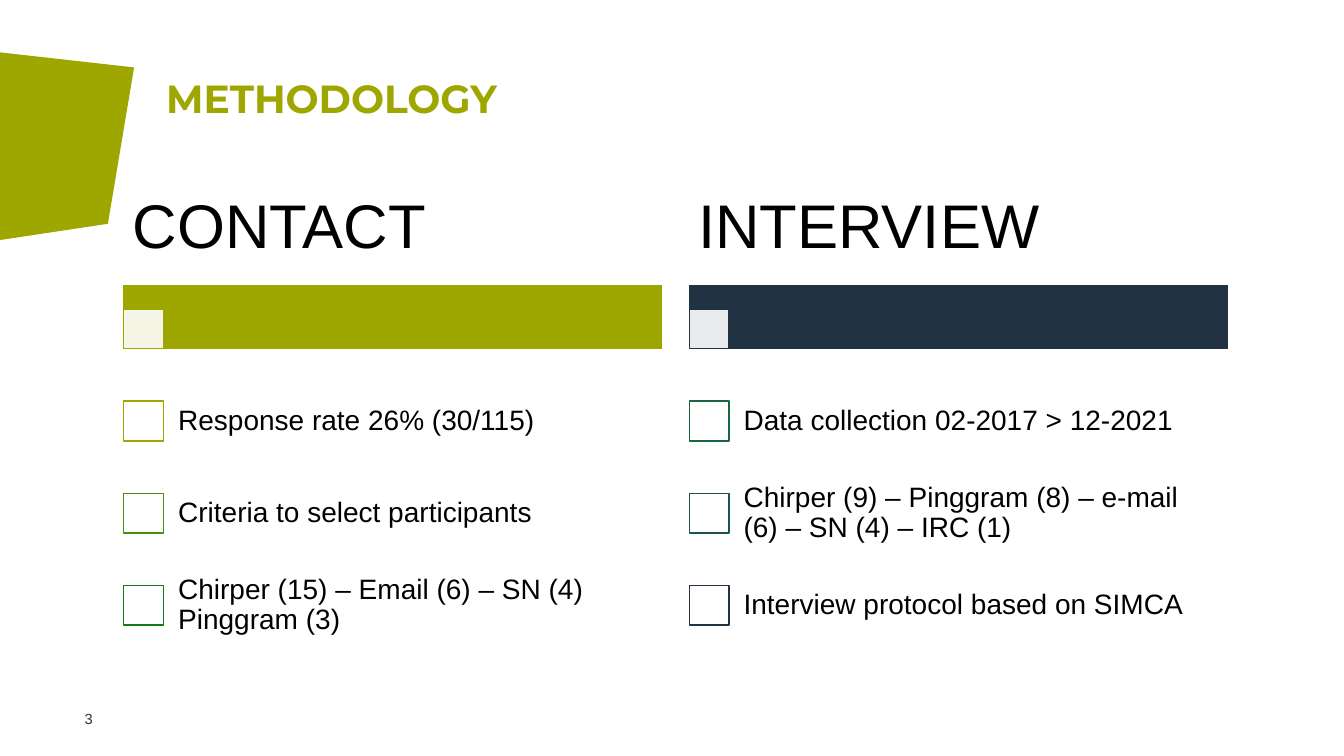
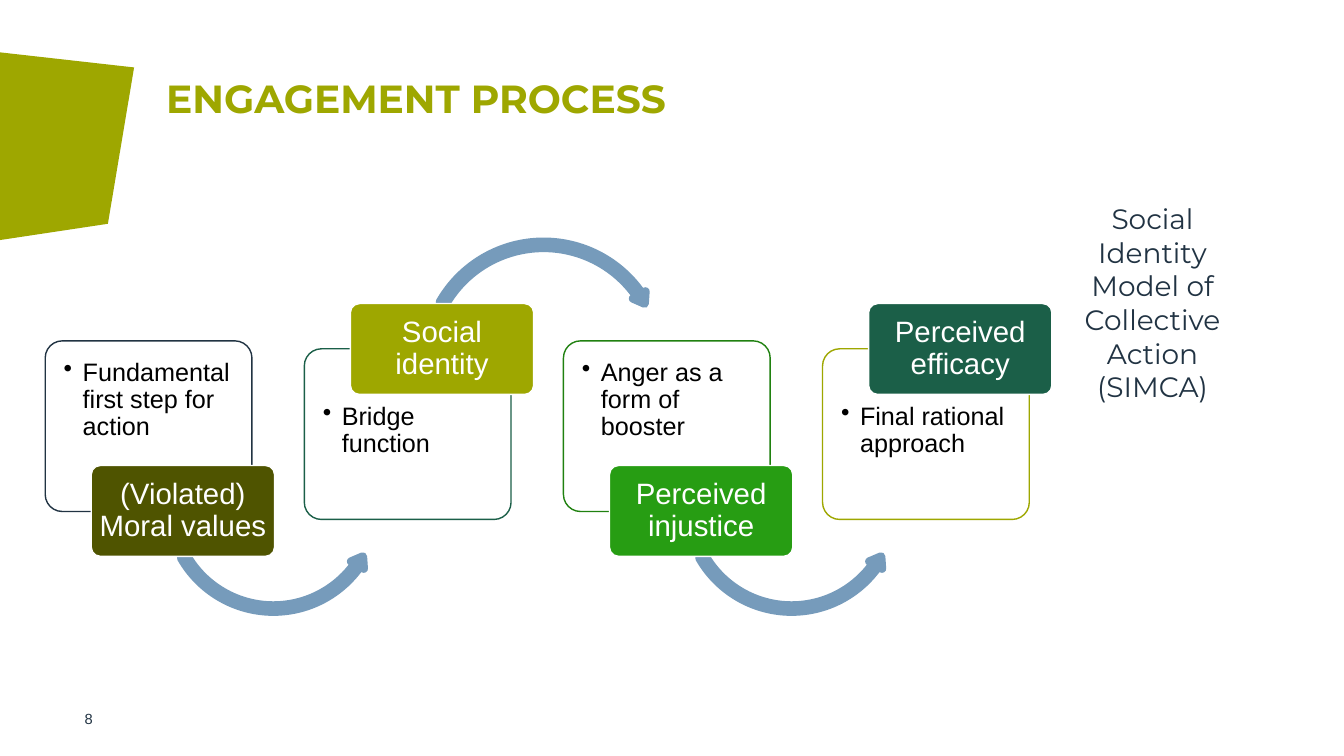
from dataclasses import dataclass
from typing import Any, NamedTuple, Optional

from lxml import etree
from pptx import Presentation
from pptx import util as u
from pptx.dml import color
from pptx.enum import shapes, text
from pptx.oxml import ns

Cm = u.Cm
Kind = shapes.MSO_SHAPE
Align = text.PP_ALIGN
Anchor = text.MSO_ANCHOR


# Theme
@dataclass(frozen=True)
class Theme:
    olive: str = "9EA700"
    navy: str = "213343"
    pine: str = "1B5F48"
    arrow: str = "769BBB"
    white: str = "FFFFFF"
    black: str = "000000"
    body_font: str = "Arial"
    title_font: str = "Montserrat"
    number_size: float = 10.5
    bullet_size: float = 18
    item_size: float = 20
    label_size: float = 21
    title_size: float = 28
    heading_size: float = 44
    panel_opacity: int = 90


THEME = Theme()


class Box(NamedTuple):
    """Left, top, width and height in centimetres."""
    left: float
    top: float
    width: float
    height: float

    def lengths(self) -> list[u.Length]:
        return [Cm(value) for value in self]


@dataclass(frozen=True)
class Style:
    size: float
    color: str = THEME.black
    font: str = THEME.body_font
    bold: bool = False
    align: Any = Align.LEFT
    anchor: Any = Anchor.MIDDLE
    spacing: Any = 0.9
    insets: tuple[float, float, float, float] = (0, 0, 0, 0)
    bullet_indent: float = 0


TITLE = Style(THEME.title_size, THEME.olive, THEME.title_font, True,
              anchor=Anchor.BOTTOM, insets=(0, 0.1, 0, 0))
NUMBER = Style(THEME.number_size, THEME.navy, align=Align.RIGHT,
               anchor=Anchor.TOP, spacing=u.Pt(14.2))
HEADING = Style(THEME.heading_size, insets=(0.23, 0.15, 0.23, 0.15))
ITEM = Style(THEME.item_size, insets=(0.41, 0.41, 0.41, 0.41))
LABEL = Style(THEME.label_size, THEME.white, align=Align.CENTER,
              insets=(0.1, 0.07, 0.1, 0.07))
SIDE_NOTE = Style(THEME.item_size, THEME.navy, THEME.title_font,
                  align=Align.CENTER, anchor=Anchor.TOP, spacing=1.0,
                  insets=(0.25, 0.13, 0.25, 0.13))


# Drawing helpers
def rgb(value: str) -> color.RGBColor:
    return color.RGBColor.from_string(value)


def write(shape: Any, words: str, style: Style) -> None:
    frame = shape.text_frame
    frame.word_wrap = True
    frame.vertical_anchor = style.anchor
    (frame.margin_left, frame.margin_top,
     frame.margin_right, frame.margin_bottom) = map(Cm, style.insets)
    paragraph = frame.paragraphs[0]
    paragraph.text = words
    paragraph.alignment = style.align
    paragraph.line_spacing = style.spacing
    if style.bullet_indent:
        indent = Cm(style.bullet_indent)
        properties = paragraph._p.get_or_add_pPr()
        properties.set("marL", str(indent))
        properties.set("indent", str(-indent))
        etree.SubElement(properties, ns.qn("a:buChar")).set("char", "•")
    font = paragraph.font
    font.name, font.size, font.bold = style.font, u.Pt(style.size), style.bold
    font.color.rgb = rgb(style.color)


def add_text(slide: Any, box: Box, words: str, style: Style) -> None:
    write(slide.shapes.add_textbox(*box.lengths()), words, style)


def paint(shape: Any, fill: str, line: Optional[str], width: float = 1,
          opacity: int = 100) -> None:
    shape.shadow.inherit = False
    shape.fill.solid()
    shape.fill.fore_color.rgb = rgb(fill)
    if opacity < 100:
        solid = shape._element.spPr.find(ns.qn("a:solidFill"))
        etree.SubElement(solid[0], ns.qn("a:alpha")).set("val", str(opacity * 1000))
    if line is None:
        shape.line.fill.background()
    else:
        shape.line.color.rgb = rgb(line)
        shape.line.width = u.Pt(width)


def add_shape(slide: Any, kind: Any, box: Box, fill: str, line: str,
              width: float = 1, opacity: int = 100,
              adjustments: tuple[float, ...] = ()) -> Any:
    shape = slide.shapes.add_shape(kind, *box.lengths())
    for index, value in enumerate(adjustments):
        shape.adjustments[index] = value
    paint(shape, fill, line, width, opacity)
    return shape


# Shared slide frame
CORNER = [(0, 1.32), (0, 6.05), (2.72, 5.64), (3.38, 1.7)]


def new_slide(presentation: Any, title: str, number: int) -> Any:
    slide = presentation.slides.add_slide(presentation.slide_layouts[6])
    points = [(Cm(x), Cm(y)) for x, y in CORNER]
    builder = slide.shapes.build_freeform(*points[0])
    builder.add_line_segments(points[1:], close=True)
    paint(builder.convert_to_shape(), THEME.olive, None)
    add_text(slide, Box(0.74, 17.83, 1.6, 0.51), str(number), NUMBER)
    add_text(slide, Box(4.19, 1.88, 26.75, 1.19), title, TITLE)
    return slide


# Methodology: two checklists
class Item(NamedTuple):
    words: str
    outline: str


class Checklist(NamedTuple):
    heading: str
    bar: str
    items: list[Item]


CHECKLISTS = [
    Checklist("CONTACT", THEME.olive, [
        Item("Response rate 26% (30/115)", THEME.olive),
        Item("Criteria to select participants", "488F0A"),
        Item("Chirper (15) – Email (6) – SN (4) Pinggram (3)", "137A15"),
    ]),
    Checklist("INTERVIEW", THEME.navy, [
        Item("Data collection 02-2017 > 12-2021", "196640"),
        Item("Chirper (9) – Pinggram (8) – e-mail (6) – SN (4) – IRC (1)", "1E5353"),
        Item("Interview protocol based on SIMCA", THEME.navy),
    ]),
]
LIST_LEFT, LIST_PITCH, LIST_WIDTH = 3.12, 14.25, 13.56
ROW_TOP, ROW_HEIGHT = 9.45, 2.32
BAR_TOP, BAR_HEIGHT = 7.19, 1.6
CHECK = 1.0


def draw_checklist(slide: Any, left: float, checklist: Checklist) -> None:
    add_shape(slide, Kind.RECTANGLE, Box(left, BAR_TOP, LIST_WIDTH, BAR_HEIGHT),
              checklist.bar, checklist.bar)
    add_shape(slide, Kind.RECTANGLE,
              Box(left, BAR_TOP + BAR_HEIGHT - CHECK, CHECK, CHECK),
              THEME.white, checklist.bar, opacity=THEME.panel_opacity)
    add_text(slide, Box(left, 4.32, LIST_WIDTH, 2.87), checklist.heading, HEADING)
    for row, item in enumerate(checklist.items):
        top = ROW_TOP + row * ROW_HEIGHT
        add_shape(slide, Kind.RECTANGLE,
                  Box(left, top + (ROW_HEIGHT - CHECK) / 2, CHECK, CHECK),
                  THEME.white, item.outline)
        add_text(slide, Box(left + 0.96, top, LIST_WIDTH - 0.96, ROW_HEIGHT),
                 item.words, ITEM)


def methodology(presentation: Any) -> None:
    slide = new_slide(presentation, "METHODOLOGY", 3)
    for column, checklist in enumerate(CHECKLISTS):
        draw_checklist(slide, LIST_LEFT + column * LIST_PITCH, checklist)


# Engagement process: steps with the label alternately below and above
class Step(NamedTuple):
    label: str
    detail: str
    fill: str
    outline: str


class Side(NamedTuple):
    panel_top: float
    text_inset: float
    label_top: float
    arrow: Any
    arrow_offset: float
    arrow_top: float
    arrow_size: float
    adjustments: tuple[float, ...]


STEPS = [
    Step("(Violated) Moral values", "Fundamental first step for action",
         "4F5400", THEME.navy),
    Step("Social identity", "Bridge function", THEME.olive, THEME.pine),
    Step("Perceived injustice", "Anger as a form of booster", "279D13", "208110"),
    Step("Perceived efficacy", "Final rational approach", THEME.pine, THEME.olive),
]
SIDES = [
    Side(8.59, 0.34, 11.73, Kind.LEFT_CIRCULAR_ARROW, 2.97, 9.96, 5.56,
         (0.028, 3.418, 21.174, 90.245, 0.033)),
    Side(8.79, 1.26, 7.65, Kind.CIRCULAR_ARROW, 2.92, 5.99, 6.22,
         (0.025, 3.031, 195.214, 125.755, 0.029)),
]
STEP_LEFT, STEP_PITCH = 1.14, 6.53


def draw_step(slide: Any, left: float, step: Step, side: Side,
              has_next: bool) -> None:
    panel = add_shape(slide, Kind.ROUNDED_RECTANGLE,
                      Box(left, side.panel_top, 5.21, 4.3), THEME.white,
                      step.outline, opacity=THEME.panel_opacity,
                      adjustments=(0.1,))
    write(panel, step.detail,
          Style(THEME.bullet_size, anchor=Anchor.TOP, bullet_indent=0.48,
                insets=(0.34, side.text_inset, 0.34, 0.34)))
    if has_next:
        add_shape(slide, side.arrow,
                  Box(left + side.arrow_offset, side.arrow_top,
                      side.arrow_size, side.arrow_size),
                  THEME.arrow, THEME.arrow, 6, adjustments=side.adjustments)
    label = add_shape(slide, Kind.ROUNDED_RECTANGLE,
                      Box(left + 1.16, side.label_top, 4.62, 2.29),
                      step.fill, THEME.white, adjustments=(0.1,))
    write(label, step.label, LABEL)


def engagement(presentation: Any) -> None:
    slide = new_slide(presentation, "ENGAGEMENT PROCESS", 8)
    add_text(slide, Box(26.34, 4.95, 5.41, 5.38),
             "Social Identity Model of Collective Action (SIMCA)", SIDE_NOTE)
    for index, step in enumerate(STEPS):
        draw_step(slide, STEP_LEFT + index * STEP_PITCH, step,
                  SIDES[index % len(SIDES)], index < len(STEPS) - 1)


def main() -> None:
    presentation = Presentation()
    presentation.slide_width, presentation.slide_height = Cm(33.87), Cm(19.05)
    methodology(presentation)
    engagement(presentation)
    presentation.save("out.pptx")


if __name__ == "__main__":
    main()
